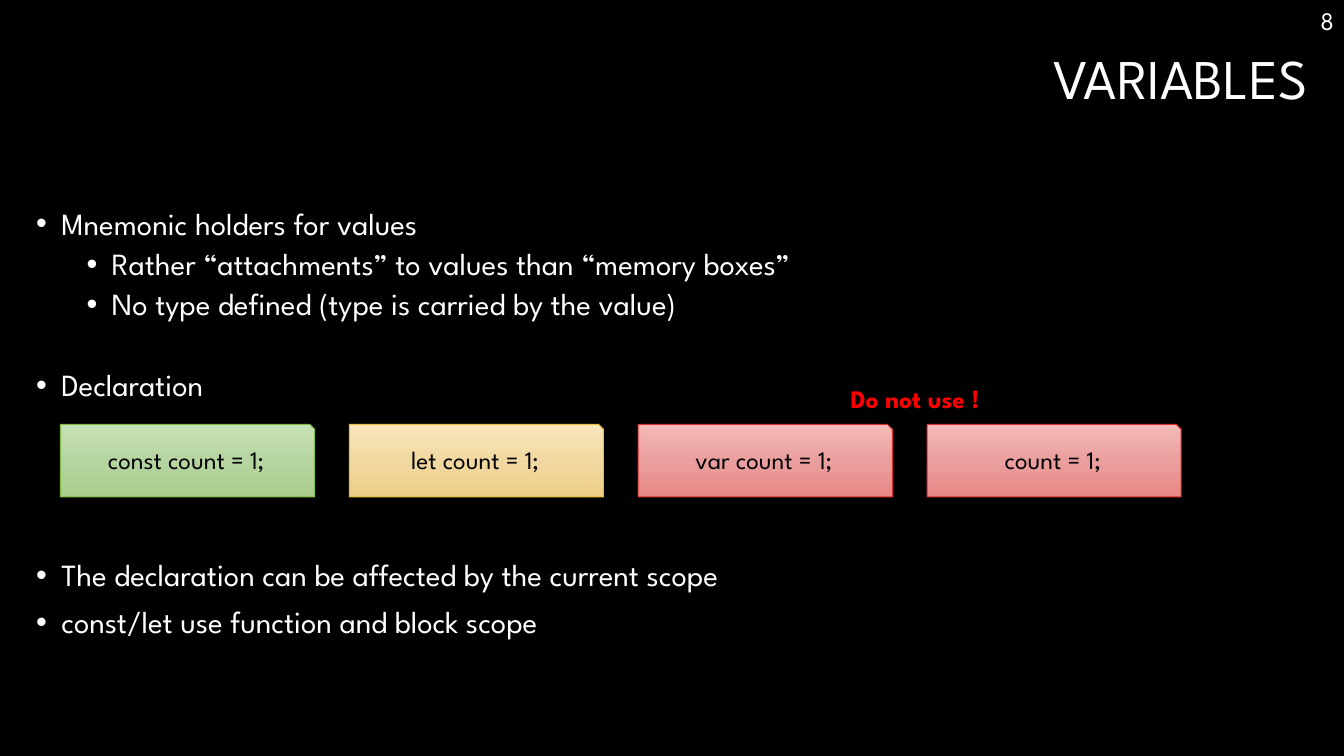
from copy import deepcopy
from pptx import Presentation
from pptx.dml.color import RGBColor as RGB
from pptx.enum.shapes import MSO_SHAPE as Shape
from pptx.enum.text import MSO_ANCHOR as Anchor, MSO_AUTO_SIZE as Fit, PP_ALIGN as Align
from pptx.oxml.ns import qn
from pptx.oxml.xmlchemy import OxmlElement as Node
from pptx.util import Inches, Pt

FONT = "League Spartan"
COLOR = {
    "black": "000000",
    "white": "FFFFFF",
    "alert": "FF0000",
    "green": ("C8E1B7", "B5D49F", "A8CD8D", "81BB42"),
    "gold": ("F8E5BD", "F1D8A0", "EECF89", "E9BF35"),
    "red": ("F3BAB9", "EA9E9D", "E78887", "DF2E28"),
}


def style(par, size, color, align=Align.LEFT, bold=False):
    par.alignment = align
    for run in par.runs:
        run.font.name = FONT
        run.font.size = Pt(size)
        run.font.bold = bold
        run.font.color.rgb = RGB.from_string(COLOR[color])


def add_text(left, top, width, height):
    frame = slide.shapes.add_textbox(
        Inches(left), Inches(top), Inches(width), Inches(height)).text_frame
    frame.word_wrap = True
    return frame


prs = Presentation()
prs.slide_width, prs.slide_height = Inches(13.33), Inches(7.5)
slide = prs.slides.add_slide(prs.slide_layouts[5])
back = slide.background.fill
back.solid()
back.fore_color.rgb = RGB.from_string(COLOR["black"])

title = slide.shapes.title
title.left, title.top = Inches(0.26), Inches(0.46)
title.width, title.height = Inches(12.81), Inches(1.41)
frame = title.text_frame
frame.text = "VARIABLES"
frame.auto_size = Fit.NONE
frame.vertical_anchor = Anchor.TOP
frame.paragraphs[0].line_spacing = 0.9
style(frame.paragraphs[0], 40, "white", Align.RIGHT)

points = [
    (0, 10, "Mnemonic holders for values"),
    (1, 5, "Rather “attachments” to values than “memory boxes”"),
    (1, 5, "No type defined (type is carried by the value)"),
    (0, 34, "Declaration"),
    (0, 112, "The declaration can be affected by the current scope"),
    (0, 10, "const/let use function and block scope"),
]
body = add_text(0.26, 2.02, 12.81, 5.03)
for i, (level, gap, text) in enumerate(points):
    par = body.add_paragraph() if i else body.paragraphs[0]
    par.text = text
    par.level = level
    par.line_spacing = 0.9
    par.space_before = Pt(gap)
    style(par, 22, "white")
    props = par._p.get_or_add_pPr()
    props.set("marL", str(Inches(0.25 + 0.5 * level)))
    props.set("indent", str(Inches(-0.25)))
    for tag, key, value in (("a:buFont", "typeface", "Arial"), ("a:buChar", "char", "•")):
        node = Node(tag)
        node.set(key, value)
        props.append(node)

number = add_text(10.45, 0, 2.88, 0.4)
number.text = "8"
style(number.paragraphs[0], 18, "white", Align.RIGHT)

cards = [
    ("const count = 1;", "green"),
    ("let count = 1;", "gold"),
    ("var count = 1;", "red"),
    ("count = 1;", "red"),
]
for i, (text, tone) in enumerate(cards):
    card = slide.shapes.add_shape(
        Shape.SNIP_1_RECTANGLE, Inches(0.6 + 2.865 * i), Inches(4.21),
        Inches(2.52), Inches(0.72))
    card.adjustments[0] = 0.068
    card.shadow.inherit = False
    card.fill.gradient()
    card.fill.gradient_angle = 270
    first = card._element.spPr.find(".//" + qn("a:gs"))
    middle = deepcopy(first)
    first.addnext(middle)
    for stop, place, shade in zip(card.fill.gradient_stops, (0, 0.52, 1), COLOR[tone]):
        stop.position = place
        stop.color.rgb = RGB.from_string(shade)
    card.line.color.rgb = RGB.from_string(COLOR[tone][3])
    card.line.width = Pt(0.75)
    frame = card.text_frame
    frame.margin_left = frame.margin_right = frame.margin_bottom = Inches(0.2)
    frame.margin_top = Inches(0.16)
    frame.vertical_anchor = Anchor.MIDDLE
    frame.text = text
    style(frame.paragraphs[0], 18, "black", Align.CENTER)

warning = add_text(6.75, 3.75, 4.65, 0.4)
warning.text = "Do not use !"
style(warning.paragraphs[0], 18, "alert", Align.CENTER, True)

prs.save("out.pptx")
